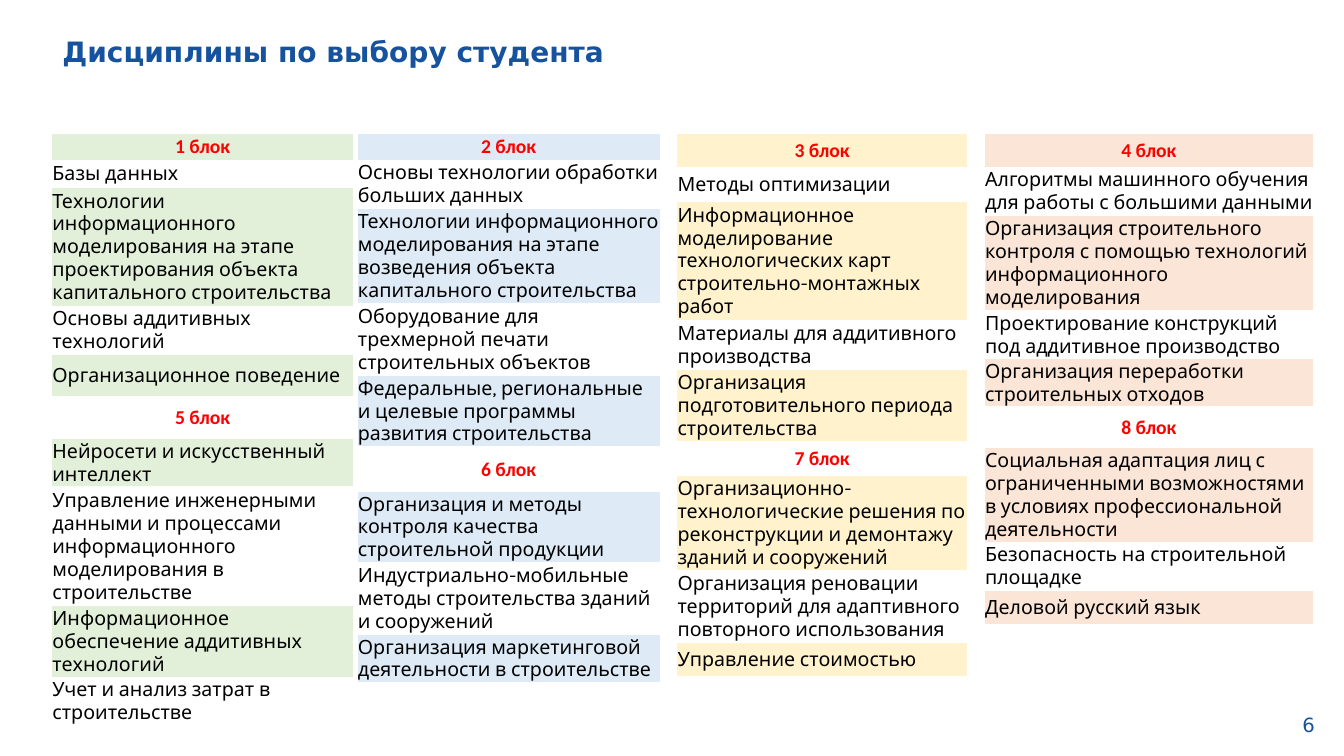
from lxml import etree
from pptx import Presentation
from pptx import util as u
from pptx.dml.color import RGBColor
from pptx.enum import text
from pptx.oxml.ns import qn

BLUE, RED, BLACK, WHITE = "16529D", "FF0000", "000000", "FFFFFF"

BLOCKS = [
    ((0.51, 1.32, 3, 5.1), "E2F0D9", [
        ("1 блок", 0.27),
        ("Базы данных", 0.27),
        ("Технологии информационного моделирования на этапе проектирования объекта капитального строительства", 0.42),
        ("Основы аддитивных технологий", 0.42),
        ("Организационное поведение", 0.42),
        ("5 блок", 0.42),
        ("Нейросети и искусственный интеллект", 0.27),
        ("Управление инженерными данными и процессами информационного моделирования в строительстве", 0.42),
        ("Информационное обеспечение аддитивных технологий", 0.27),
        ("Учет и анализ затрат в строительстве", 0.42),
    ]),
    ((3.54, 1.32, 3.01, 5.19), "DEEBF7", [
        ("2 блок", 0.27),
        ("Основы технологии обработки больших данных", 0.27),
        ("Технологии информационного моделирования на этапе возведения объекта капитального строительства", 0.27),
        ("Оборудование для трехмерной печати строительных объектов", 0.27),
        ("Федеральные, региональные и целевые программы развития строительства", 0.47),
        ("6 блок", 0.44),
        ("Организация и методы контроля качества строительной продукции", 0.27),
        ("Индустриально-мобильные методы строительства зданий и сооружений", 0.27),
        ("Организация маркетинговой деятельности в строительстве", 0.27),
    ]),
    ((6.71, 1.32, 2.89, 5.16), "FFF2CC", [
        ("3 блок", 0.34),
        ("Методы оптимизации", 0.34),
        ("Информационное моделирование технологических карт строительно-монтажных работ", 0.22),
        ("Материалы для аддитивного производства", 0.49),
        ("Организация подготовительного периода строительства", 0.52),
        ("7 блок", 0.34),
        ("Организационно-технологические решения по реконструкции и демонтажу зданий и сооружений", 0.49),
        ("Организация реновации территорий для адаптивного повторного использования", 0.22),
        ("Управление стоимостью", 0.34),
    ]),
    ((9.76, 1.32, 3.27, 4.63), "FBE5D6", [
        ("4 блок", 0.34),
        ("Алгоритмы машинного обучения для работы с большими данными", 0.34),
        ("Организация строительного контроля с помощью технологий информационного моделирования", 0.22),
        ("Проектирование конструкций под аддитивное производство", 0.22),
        ("Организация переработки строительных отходов", 0.34),
        ("8 блок", 0.4),
        ("Социальная адаптация лиц с ограниченными возможностями в условиях профессиональной деятельности", 0.34),
        ("Безопасность на строительной площадке", 0.34),
        ("Деловой русский язык", 0.34),
    ]),
]


def rgb(value):
    return RGBColor.from_string(value)


def style_run(p, size, name, color, bold=False):
    font = p.runs[0].font
    font.size, font.name, font.bold = u.Pt(size), name, bold
    font.color.rgb = rgb(color)


def add_label(s, box, words, size, bold=False, align=text.PP_ALIGN.LEFT,
              anchor=text.MSO_ANCHOR.TOP, spacing=1.0):
    tf = s.shapes.add_textbox(*map(u.Inches, box)).text_frame
    tf.word_wrap = True
    tf.vertical_anchor = anchor
    p = tf.paragraphs[0]
    p.text = words
    p.alignment, p.line_spacing = align, spacing
    style_run(p, size, "DejaVu Sans", BLUE, bold)


def add_borders(cell):
    tc_pr = cell._tc.get_or_add_tcPr()
    for side in ("lnL", "lnR", "lnT", "lnB"):
        ln = etree.SubElement(tc_pr, qn("a:" + side), w=str(u.Pt(1)))
        fill = etree.SubElement(ln, qn("a:solidFill"))
        etree.SubElement(fill, qn("a:srgbClr"), val=WHITE)


def fill_cell(cell, words, color):
    add_borders(cell)
    cell.fill.solid()
    cell.fill.fore_color.rgb = rgb(color)
    cell.vertical_anchor = text.MSO_ANCHOR.MIDDLE
    cell.margin_left = cell.margin_right = cell.margin_top = u.Inches(0.01)
    cell.margin_bottom = 0
    p = cell.text_frame.paragraphs[0]
    p.text = words
    if words.endswith(" блок"):
        p.alignment = text.PP_ALIGN.CENTER
        style_run(p, 14, "Calibri", RED, True)
    else:
        p.alignment = text.PP_ALIGN.LEFT
        style_run(p, 14, "Karla", BLACK)


def add_block_table(s, box, tint, rows):
    frame = s.shapes.add_table(len(rows), 1, *map(u.Inches, box))
    table = frame.table
    table.first_row = table.horz_banding = False
    for i, (words, height) in enumerate(rows):
        table.rows[i].height = u.Inches(height)
        fill_cell(table.cell(i, 0), words, WHITE if i % 2 else tint)
    frame.height = u.Inches(box[3])


def main():
    prs = Presentation()
    prs.slide_width, prs.slide_height = u.Inches(13.33), u.Inches(7.5)
    s = prs.slides.add_slide(prs.slide_layouts[6])
    add_label(s, (0.52, 0.33, 8.03, 0.89), "Дисциплины по выбору студента", 20,
              bold=True, spacing=0.9)
    add_label(s, (12.64, 6.99, 0.5, 0.4), "6", 14, align=text.PP_ALIGN.RIGHT,
              anchor=text.MSO_ANCHOR.MIDDLE)
    for box, tint, rows in BLOCKS:
        add_block_table(s, box, tint, rows)
    prs.save("out.pptx")


if __name__ == "__main__":
    main()
